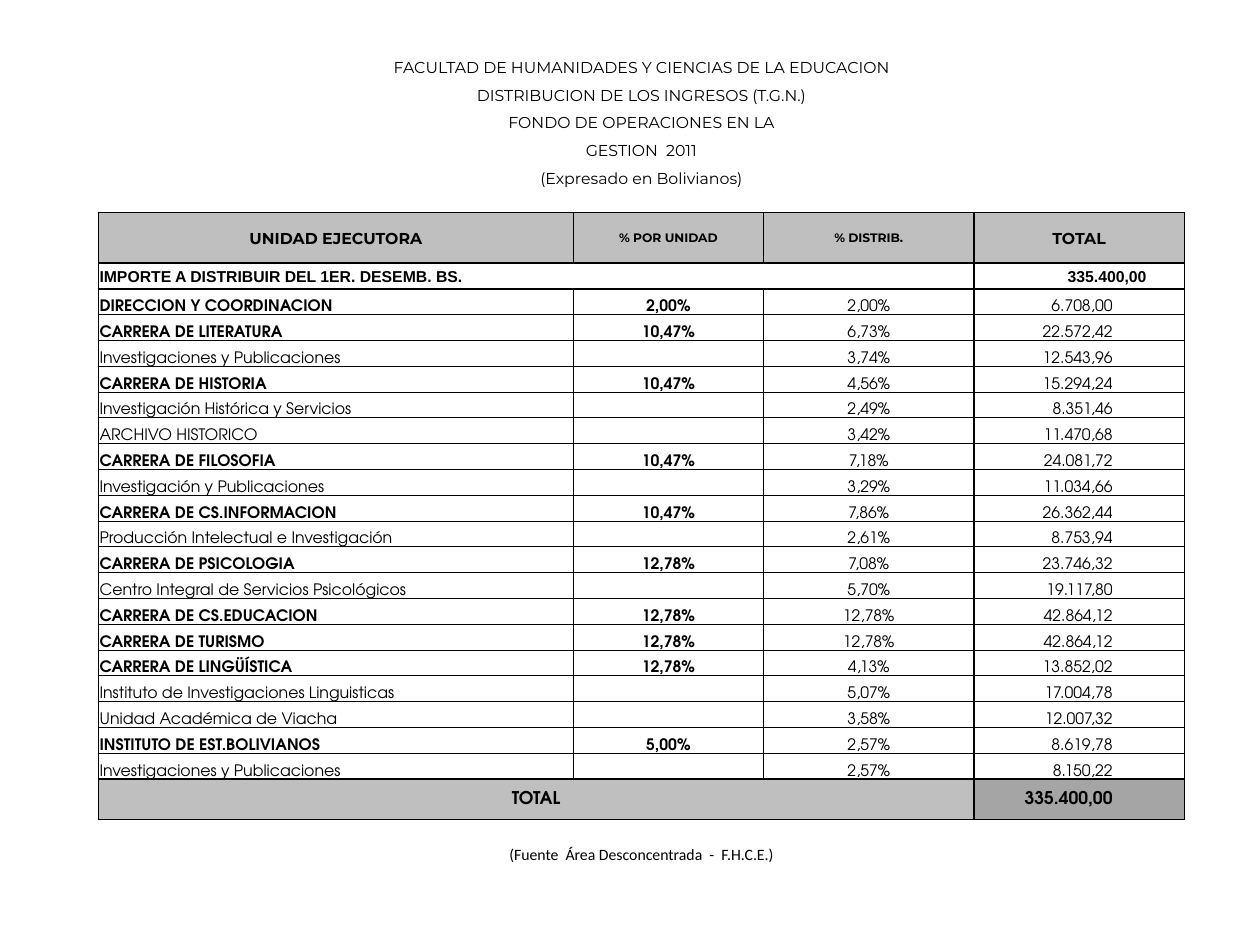
from dataclasses import dataclass

from lxml.etree import SubElement
from pptx import Presentation
from pptx.dml.color import RGBColor
from pptx.enum.text import MSO_ANCHOR as Anchor, PP_ALIGN as Align
from pptx.oxml.ns import qn
from pptx.util import Inches, Pt


@dataclass(frozen=True)
class Theme:
    black: str = "000000"
    header: str = "BFBFBF"
    total: str = "A5A5A5"
    heading_font: str = "Montserrat"
    amount_font: str = "Arial"
    body_font: str = "TeX Gyre Adventor"
    source_font: str = "Calibri"
    small: int = 7
    body: int = 9
    large: int = 10
    thin: float = 0.5
    rule: float = 1


THEME = Theme()
FRAME = dict.fromkeys("LRTB", THEME.rule)
ROW_LINES = FRAME | {"T": THEME.thin, "B": THEME.thin}
AMOUNT_INSET = 0.57

TITLES = [
    "FACULTAD DE HUMANIDADES Y CIENCIAS DE LA EDUCACION",
    "DISTRIBUCION DE LOS INGRESOS (T.G.N.)",
    "FONDO DE OPERACIONES EN LA",
    "GESTION  2011",
    "(Expresado en Bolivianos)",
]
HEADERS = ["UNIDAD EJECUTORA", "% POR UNIDAD", "% DISTRIB.", "TOTAL"]
GRAND_TOTAL = "335.400,00"
# Unit, share of the unit, distributed share, amount
UNITS = [
    ("DIRECCION Y COORDINACION", "2,00%", "2,00%", "6.708,00"),
    ("CARRERA DE LITERATURA", "10,47%", "6,73%", "22.572,42"),
    ("Investigaciones y Publicaciones", "", "3,74%", "12.543,96"),
    ("CARRERA DE HISTORIA", "10,47%", "4,56%", "15.294,24"),
    ("Investigación Histórica y Servicios", "", "2,49%", "8.351,46"),
    ("ARCHIVO HISTORICO", "", "3,42%", "11.470,68"),
    ("CARRERA DE FILOSOFIA", "10,47%", "7,18%", "24.081,72"),
    ("Investigación y Publicaciones", "", "3,29%", "11.034,66"),
    ("CARRERA DE CS.INFORMACION", "10,47%", "7,86%", "26.362,44"),
    ("Producción Intelectual e Investigación", "", "2,61%", "8.753,94"),
    ("CARRERA DE PSICOLOGIA", "12,78%", "7,08%", "23.746,32"),
    ("Centro Integral de Servicios Psicológicos", "", "5,70%", "19.117,80"),
    ("CARRERA DE CS.EDUCACION", "12,78%", "12,78%", "42.864,12"),
    ("CARRERA DE TURISMO", "12,78%", "12,78%", "42.864,12"),
    ("CARRERA DE LINGÜÍSTICA", "12,78%", "4,13%", "13.852,02"),
    ("Instituto de Investigaciones Linguisticas", "", "5,07%", "17.004,78"),
    ("Unidad Académica de Viacha", "", "3,58%", "12.007,32"),
    ("INSTITUTO DE EST.BOLIVIANOS", "5,00%", "2,57%", "8.619,78"),
    ("Investigaciones y Publicaciones", "", "2,57%", "8.150,22"),
]

# Row positions and heights
SPACER_ROW = len(TITLES)
HEADER_ROW = SPACER_ROW + 1
IMPORT_ROW = HEADER_ROW + 1
FIRST_UNIT = IMPORT_ROW + 1
TOTAL_ROW = FIRST_UNIT + len(UNITS)
SOURCE_ROW = TOTAL_ROW + 2
HEIGHTS = ([1.11 / len(TITLES)] * len(TITLES) + [0.19, 0.4]
           + [4.1 / (len(UNITS) + 1)] * (len(UNITS) + 1) + [0.32, 0.18, 0.18])
WIDTHS = [3.77, 1.51, 1.67, 1.67]


def write(cell, text, *, font=THEME.body_font, size=THEME.body, bold=False,
          align=Align.CENTER, anchor=Anchor.BOTTOM, inset=0.01):
    cell.vertical_anchor = anchor
    cell.margin_right = Inches(inset)
    para = cell.text_frame.paragraphs[0]
    para.alignment = align
    if text:
        span = para.add_run()
        span.text = text
        span.font.name, span.font.size, span.font.bold = font, Pt(size), bold
        span.font.color.rgb = RGBColor.from_string(THEME.black)


def dress(cell, lines, fill=None):
    """Set the borders, in points by side, and the fill of one cell."""
    properties = cell._tc.get_or_add_tcPr()
    for side in "LRTB":
        width = lines.get(side, 0)
        line = SubElement(properties, qn(f"a:ln{side}"), w=str(Pt(width)))
        if width:
            paint = SubElement(line, qn("a:solidFill"))
            SubElement(paint, qn("a:srgbClr"), val=THEME.black)
        else:
            SubElement(line, qn("a:noFill"))
    if fill:
        cell.fill.solid()
        cell.fill.fore_color.rgb = RGBColor.from_string(fill)
    else:
        cell.fill.background()


def add_grid(page, left, top):
    frame = page.shapes.add_table(len(HEIGHTS), len(WIDTHS), Inches(left), Inches(top),
                                  Inches(sum(WIDTHS)), Inches(sum(HEIGHTS)))
    table = frame.table
    table.first_row = table.horz_banding = False
    for column, width in zip(table.columns, WIDTHS):
        column.width = Inches(width)
    for row, height in zip(table.rows, HEIGHTS):
        row.height = Inches(height)
    for cell in table.iter_cells():
        cell.margin_left = cell.margin_right = cell.margin_top = Inches(0.01)
        cell.margin_bottom = 0
        # Keeps empty cells from stretching their row
        SubElement(cell.text_frame.paragraphs[0]._p, qn("a:endParaRPr"),
                   sz=str(THEME.body * 100))
    return table


def fill_captions(table):
    captions = [(row, text, THEME.heading_font) for row, text in enumerate(TITLES)]
    captions.append((SOURCE_ROW, "(Fuente  Área Desconcentrada  -  F.H.C.E.)",
                     THEME.source_font))
    for row, text, font in captions:
        table.cell(row, 0).merge(table.cell(row, 3))
        write(table.cell(row, 0), text, font=font)
    # Borderless rows, apart from the edges they share with the table body
    edges = {SPACER_ROW: {"B": THEME.rule}, TOTAL_ROW + 1: {"T": THEME.rule}}
    for row in [*range(HEADER_ROW), TOTAL_ROW + 1, SOURCE_ROW]:
        for column in range(len(WIDTHS)):
            dress(table.cell(row, column), edges.get(row, {}))


def fill_header(table):
    for column, text in enumerate(HEADERS):
        cell = table.cell(HEADER_ROW, column)
        size = THEME.small if "%" in text else THEME.body
        write(cell, text, font=THEME.heading_font, size=size, bold=True,
              anchor=Anchor.MIDDLE)
        dress(cell, FRAME, THEME.header)
    # Amount to be distributed
    label, covered, blank, amount = (table.cell(IMPORT_ROW, i) for i in range(4))
    label.merge(covered)
    style = dict(font=THEME.amount_font, bold=True, anchor=Anchor.MIDDLE)
    write(label, "IMPORTE A DISTRIBUIR DEL 1ER. DESEMB. BS.", align=Align.LEFT, **style)
    write(amount, GRAND_TOTAL, align=Align.RIGHT, inset=0.3, **style)
    for cell, sides in [(label, "LTB"), (covered, "TB"), (blank, "RTB"), (amount, "LRTB")]:
        dress(cell, dict.fromkeys(sides, THEME.rule))


def fill_units(table):
    for row, (unit, share, part, amount) in enumerate(UNITS, FIRST_UNIT):
        cells = [table.cell(row, column) for column in range(len(WIDTHS))]
        write(cells[0], unit, bold=bool(share), align=Align.LEFT)
        write(cells[1], share, bold=True)
        write(cells[2], part)
        write(cells[3], amount, align=Align.RIGHT, inset=AMOUNT_INSET)
        lines = dict(ROW_LINES)
        if row == FIRST_UNIT:
            lines["T"] = THEME.rule
        if row == TOTAL_ROW - 1:
            lines["B"] = THEME.rule
        for cell in cells:
            dress(cell, lines)


def fill_total(table):
    label, amount = table.cell(TOTAL_ROW, 0), table.cell(TOTAL_ROW, 3)
    label.merge(table.cell(TOTAL_ROW, 2))
    style = dict(size=THEME.large, bold=True, anchor=Anchor.MIDDLE)
    write(label, "TOTAL", **style)
    write(amount, GRAND_TOTAL, align=Align.RIGHT, inset=AMOUNT_INSET, **style)
    for column in range(3):
        dress(table.cell(TOTAL_ROW, column), FRAME, THEME.header)
    dress(amount, FRAME, THEME.total)


def main():
    deck = Presentation()
    deck.slide_width, deck.slide_height = Inches(10), Inches(7.5)
    page = deck.slides.add_slide(deck.slide_layouts[6])
    table = add_grid(page, 0.78, 0.39)
    for fill_part in (fill_captions, fill_header, fill_units, fill_total):
        fill_part(table)
    deck.save("out.pptx")


if __name__ == "__main__":
    main()
